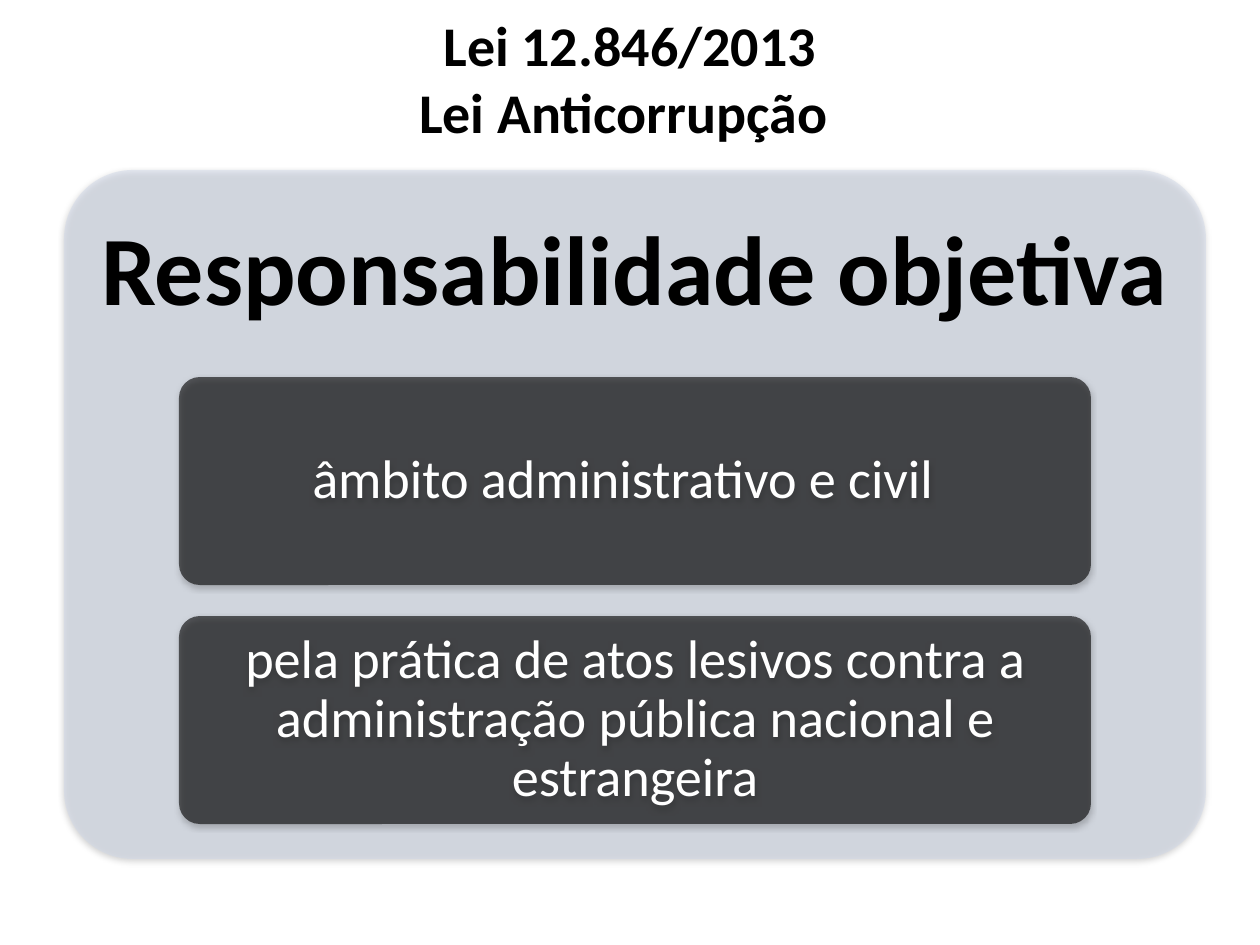
import pptx
import pptx.dml.color
import pptx.enum.shapes
import pptx.enum.text
import pptx.oxml
import pptx.oxml.ns
import pptx.util

EMU_PER_PX = 914400 / 126
BLACK = pptx.dml.color.RGBColor(0x00, 0x00, 0x00)
WHITE = pptx.dml.color.RGBColor(0xFF, 0xFF, 0xFF)
PALE_BLUE = pptx.dml.color.RGBColor(0xD0, 0xD8, 0xE8)

TITLE_FORMAT = {"name": "Calibri", "size": pptx.util.Pt(32), "bold": True}
HEADING_FORMAT = {"name": "Calibri", "size": pptx.util.Pt(56), "bold": True}
ITEM_FORMAT = {"name": "Calibri", "size": pptx.util.Pt(31), "bold": False}

PANEL_LEFT, PANEL_TOP, PANEL_WIDTH, PANEL_HEIGHT = 64, 170, 1142, 689
HEADING_HEIGHT = 207
ITEM_LEFT, ITEM_TOP, ITEM_WIDTH, ITEM_HEIGHT, ITEM_PITCH = 179, 377, 912, 208, 239
# Each item has its text and its right margin.
ITEMS = [
    ("âmbito administrativo e civil", 36),
    ("pela prática de atos lesivos contra a administração pública nacional e estrangeira", 11),
]

SHADOW = (
    '<a:effectLst %s><a:outerShdw blurRad="39370" dist="22860" dir="5400000" rotWithShape="0">'
    '<a:srgbClr val="000000"><a:alpha val="35000"/></a:srgbClr></a:outerShdw></a:effectLst>'
    % pptx.oxml.ns.nsdecls("a")
)


def px(length):
    return pptx.util.Emu(round(length * EMU_PER_PX))


def set_attributes(target, values):
    for name, value in values.items():
        setattr(target, name, value)


def write_text(shape, lines, font_format, color, line_spacing, margins, anchor):
    """Fill a shape with centred lines; margins are left, top, right, bottom."""
    frame = shape.text_frame
    sides = ("margin_left", "margin_top", "margin_right", "margin_bottom")
    set_attributes(frame, dict(zip(sides, map(px, margins))))
    set_attributes(frame, {
        "word_wrap": True,
        "auto_size": pptx.enum.text.MSO_AUTO_SIZE.NONE,
        "vertical_anchor": anchor,
        "text": "\n".join(lines),
    })
    for paragraph in frame.paragraphs:
        paragraph.alignment = pptx.enum.text.PP_ALIGN.CENTER
        paragraph.line_spacing = line_spacing
        for run in paragraph.runs:
            set_attributes(run.font, font_format)
            run.font.color.rgb = color


def add_title(slide, lines):
    title = slide.shapes.title
    set_attributes(title, {"left": px(26), "top": px(4), "width": px(1208), "height": px(149)})
    write_text(title, lines, TITLE_FORMAT, BLACK, 1.0, (13, 6, 13, 6),
               pptx.enum.text.MSO_ANCHOR.TOP)


def add_rounded_box(slide, left, top, width, height, color, opacity):
    """Add a translucent rounded box with a soft shadow; opacity is in percent."""
    box = slide.shapes.add_shape(pptx.enum.shapes.MSO_SHAPE.ROUNDED_RECTANGLE,
                                 px(left), px(top), px(width), px(height))
    box.adjustments[0] = 0.1
    box.fill.solid()
    box.fill.fore_color.rgb = color
    box.line.fill.background()
    properties = box.fill._xPr
    color_element = properties.find(".//" + pptx.oxml.ns.qn("a:srgbClr"))
    color_element.append(pptx.oxml.parse_xml(
        '<a:alpha %s val="%d"/>' % (pptx.oxml.ns.nsdecls("a"), opacity * 1000)))
    properties.append(pptx.oxml.parse_xml(SHADOW))
    return box


def add_heading(slide, text):
    heading = slide.shapes.add_textbox(px(PANEL_LEFT), px(PANEL_TOP),
                                       px(PANEL_WIDTH), px(HEADING_HEIGHT))
    write_text(heading, [text], HEADING_FORMAT, BLACK, 0.9, (29, 29, 29, 29),
               pptx.enum.text.MSO_ANCHOR.MIDDLE)


def add_items(slide):
    for index, (text, right_margin) in enumerate(ITEMS):
        box = add_rounded_box(slide, ITEM_LEFT, ITEM_TOP + index * ITEM_PITCH,
                              ITEM_WIDTH, ITEM_HEIGHT, BLACK, 60)
        write_text(box, [text], ITEM_FORMAT, WHITE, 0.9, (11, 8, right_margin, 8),
                   pptx.enum.text.MSO_ANCHOR.MIDDLE)


def main():
    presentation = pptx.Presentation()
    presentation.slide_width = pptx.util.Inches(10)
    presentation.slide_height = pptx.util.Inches(7.5)
    slide = presentation.slides.add_slide(presentation.slide_layouts[5])
    add_title(slide, ["Lei 12.846/2013", "Lei Anticorrupção "])
    add_rounded_box(slide, PANEL_LEFT, PANEL_TOP, PANEL_WIDTH, PANEL_HEIGHT, PALE_BLUE, 50)
    add_heading(slide, "Responsabilidade objetiva")
    add_items(slide)
    presentation.save("out.pptx")


if __name__ == "__main__":
    main()
